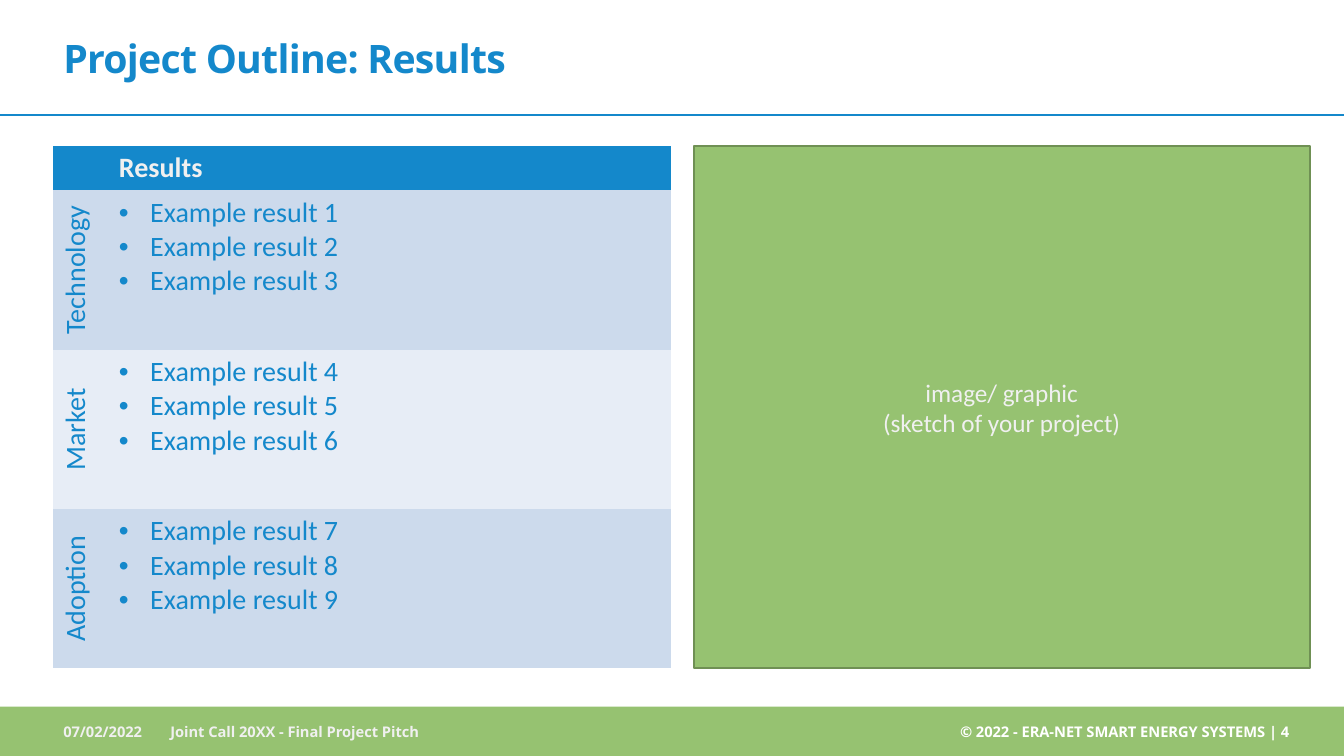
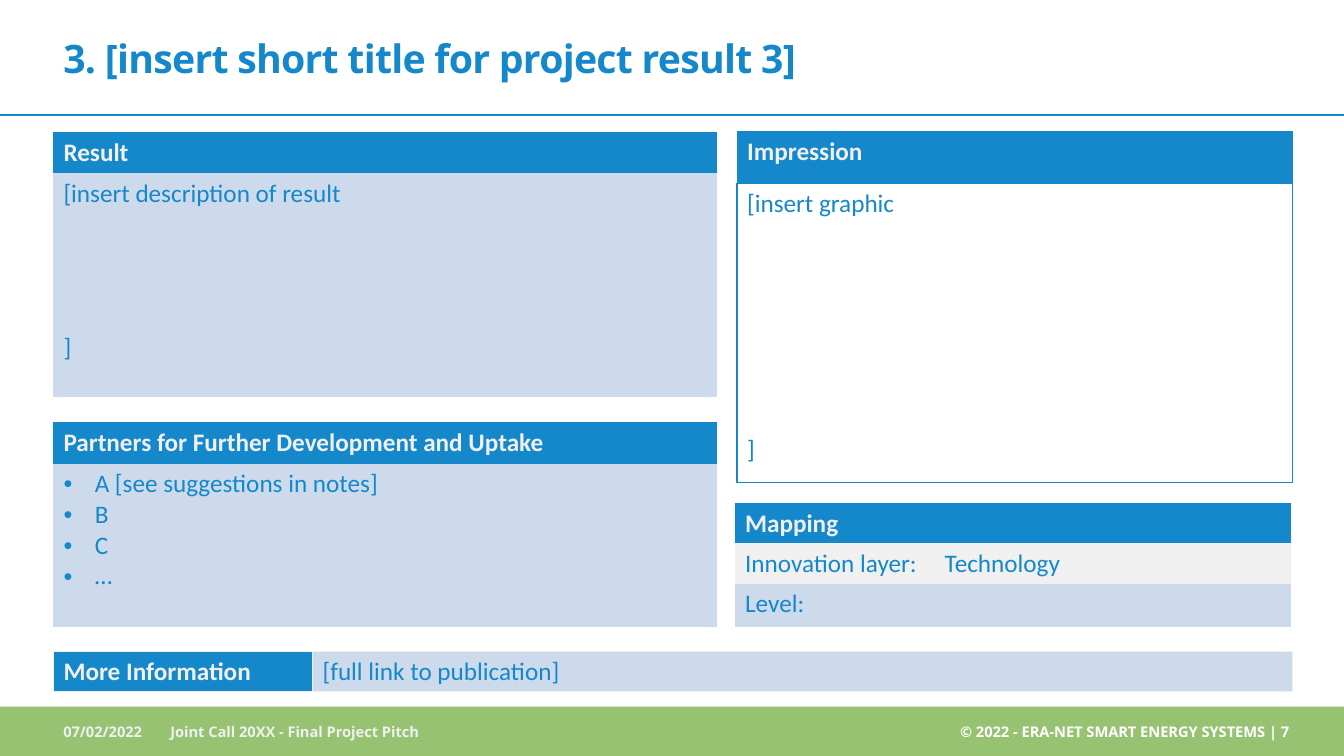
"""Build two project pitch slides: the results outline and one result in detail."""
from dataclasses import dataclass
from typing import NamedTuple, Optional

from lxml.etree import SubElement as Sub
from pptx import Presentation
from pptx.dml.color import RGBColor as Color
from pptx.enum.shapes import MSO_CONNECTOR as Link, MSO_SHAPE as Kind
from pptx.enum.text import MSO_ANCHOR as Anchor, PP_ALIGN as Align
from pptx.oxml.ns import qn
from pptx.shapes.autoshape import Shape
from pptx.slide import Slide
from pptx.table import _Cell as Slot
from pptx.text.text import TextFrame as Frame
from pptx.util import Emu, Pt

SCALE = 9144
WIDE, HIGH = 1333, 750
LEFT = 53
HANG = 31
PLAIN = "{2D5ABB26-0587-4C30-8999-92F81FD0307C}"
HUES = {
    "blue": "1488CB",
    "green": "96C271",
    "moss": "6F9054",
    "pale": "CCDAEC",
    "light": "E7EDF6",
    "gray": "F0F0F0",
    "white": "FFFFFF",
}


class Area(NamedTuple):
    x: int
    y: int
    w: int
    h: int


@dataclass(frozen=True)
class Cell:
    text: str = ""
    fill: Optional[str] = "pale"
    color: str = "blue"
    bold: bool = False
    bullet: bool = False
    gap: int = 0
    turn: bool = False
    edge: Optional[str] = None


@dataclass(frozen=True)
class Grid:
    x: int
    y: int
    cols: list[int]
    rows: list[int]
    cells: list[list[Cell]]
    size: int = 18
    merge: bool = False


def px(num: int) -> Emu:
    return Emu(num * SCALE)


def hue(name: str) -> Color:
    return Color.from_string(HUES[name])


def write(frame: Frame, text: str, *, size: float = 18, font: str = "Calibri",
          color: str = "blue", bold: bool = False, align: Align = Align.LEFT,
          bullet: bool = False, gap: int = 0, track: int = 0) -> None:
    for num, line in enumerate(text.split("\n")):
        para = frame.add_paragraph() if num else frame.paragraphs[0]
        para.text = line
        para.alignment = align
        if num and gap:
            para.space_before = Pt(gap)
        if bullet:
            props = para._p.get_or_add_pPr()
            props.set("marL", str(px(HANG)))
            props.set("indent", str(px(-HANG)))
            Sub(props, qn("a:buFont"), typeface="Arial")
            Sub(props, qn("a:buChar"), char="•")
        for run in para.runs:
            run.font.size = Pt(size)
            run.font.name = font
            run.font.bold = bold
            run.font.color.rgb = hue(color)
            if track:
                run.font._element.set("spc", str(track))


def label(slide: Slide, area: Area, text: str, **style) -> Frame:
    frame = slide.shapes.add_textbox(*map(px, area)).text_frame
    frame.word_wrap = True
    frame.vertical_anchor = Anchor.MIDDLE
    write(frame, text, font="Open Sans", bold=True, **style)
    return frame


def block(slide: Slide, area: Area, fill: str, line: Optional[str] = None) -> Shape:
    shape = slide.shapes.add_shape(Kind.RECTANGLE, *map(px, area))
    shape.shadow.inherit = False
    shape.fill.solid()
    shape.fill.fore_color.rgb = hue(fill)
    if line:
        shape.line.color.rgb = hue(line)
        shape.line.width = Pt(1.25)
    else:
        shape.line.fill.background()
    return shape


def rule(slide: Slide, y: int) -> None:
    line = slide.shapes.add_connector(Link.STRAIGHT, 0, px(y), px(WIDE), px(y))
    line.line.color.rgb = hue("blue")
    line.line.width = Pt(1)
    Sub(line._element.spPr, qn("a:effectLst"))


def fill_slot(slot: Slot, cell: Cell, size: int) -> None:
    props = slot._tc.get_or_add_tcPr()
    if cell.edge:
        for side in "LRTB":
            line = Sub(props, qn(f"a:ln{side}"), w=str(Pt(1)))
            Sub(Sub(line, qn("a:solidFill")), qn("a:srgbClr"), val=HUES[cell.edge])
    if cell.fill:
        slot.fill.solid()
        slot.fill.fore_color.rgb = hue(cell.fill)
    else:
        slot.fill.background()
    if cell.turn:
        props.set("vert", "vert270")
    if cell.text:
        write(slot.text_frame, cell.text, size=size, color=cell.color, bold=cell.bold,
              bullet=cell.bullet, gap=cell.gap,
              align=Align.CENTER if cell.turn else Align.LEFT)


def draw_grid(slide: Slide, grid: Grid) -> None:
    area = Area(grid.x, grid.y, sum(grid.cols), sum(grid.rows))
    shape = slide.shapes.add_table(len(grid.rows), len(grid.cols), *map(px, area))
    table = shape.table
    table.first_row = table.horz_banding = False
    for style in shape._element.iter(qn("a:tableStyleId")):
        style.text = PLAIN
    for col, wide in zip(table.columns, grid.cols):
        col.width = px(wide)
    for row, high, cells in zip(table.rows, grid.rows, grid.cells):
        row.height = px(high)
        for slot, cell in zip(row.cells, cells):
            fill_slot(slot, cell, grid.size)
    if grid.merge:
        table.cell(0, 0).merge(table.cell(0, len(grid.cols) - 1))


def head(text: str = "", edge: Optional[str] = None) -> Cell:
    return Cell(text, "blue", "gray", True, edge=edge)


def base(deck: Presentation, title: str, page: int) -> Slide:
    slide = deck.slides.add_slide(deck.slide_layouts[6])
    block(slide, Area(0, 701, WIDE, HIGH - 701), "green")
    rule(slide, 114)
    frame = label(slide, Area(LEFT, 4, 1036, 102), title, size=28, track=-50)
    frame.margin_bottom = 0
    label(slide, Area(LEFT, 706, 106, 40), "07/02/2022", size=10.5, color="gray")
    label(slide, Area(159, 706, 748, 40), "Joint Call 20XX - Final Project Pitch",
          size=10.5, color="gray")
    frame = label(slide, Area(907, 704, 372, 44),
                  f"© 2022 - ERA-NET SMART ENERGY SYSTEMS | {page}",
                  size=10.5, color="white", align=Align.RIGHT)
    frame.margin_right = 0
    return slide


def outline(deck: Presentation) -> None:
    slide = base(deck, "Project Outline: Results", 4)
    cells = [[head(), head("Results")]]
    for num, name in enumerate(["Technology", "Market", "Adoption"]):
        fill = "light" if num % 2 else "pale"
        items = "\n".join(f"Example result {num * 3 + step}" for step in (1, 2, 3))
        cells.append([Cell(name, fill, turn=True), Cell(items, fill, bullet=True)])
    draw_grid(slide, Grid(LEFT, 145, [55, 558], [44] + [158] * 3, cells, size=20))
    shape = block(slide, Area(688, 145, 611, 518), "green", "moss")
    shape.text_frame.vertical_anchor = Anchor.MIDDLE
    write(shape.text_frame, "image/ graphic\n(sketch of your project)",
          color="gray", align=Align.CENTER)


def detail(deck: Presentation) -> None:
    slide = base(deck, "3. [insert short title for project result 3]", 7)
    grids = [
        Grid(LEFT, 131, [658], [41, 222],
             [[head("Result")], [Cell("[insert description of result\n]", gap=88)]]),
        Grid(LEFT, 419, [658], [41, 162],
             [[head("Partners for Further Development and Uptake")],
              [Cell("A [see suggestions in notes]\nB\nC\n…", bullet=True)]]),
        Grid(731, 130, [551], [52, 297],
             [[head("Impression")],
              [Cell("[insert graphic\n]", None, gap=154, edge="blue")]]),
        Grid(729, 499, [198, 353], [40, 40, 43],
             [[head("Mapping"), head()],
              [Cell("Innovation layer:", "gray"), Cell("Technology", "gray")],
              [Cell("Level:"), Cell()]], merge=True),
        Grid(LEFT, 646, [257, 972], [40],
             [[head("More Information", "gray"),
               Cell("[full link to publication]", edge="gray")]]),
    ]
    for grid in grids:
        draw_grid(slide, grid)


def main() -> None:
    deck = Presentation()
    deck.slide_width, deck.slide_height = px(WIDE), px(HIGH)
    outline(deck)
    detail(deck)
    deck.save("out.pptx")


if __name__ == "__main__":
    main()
